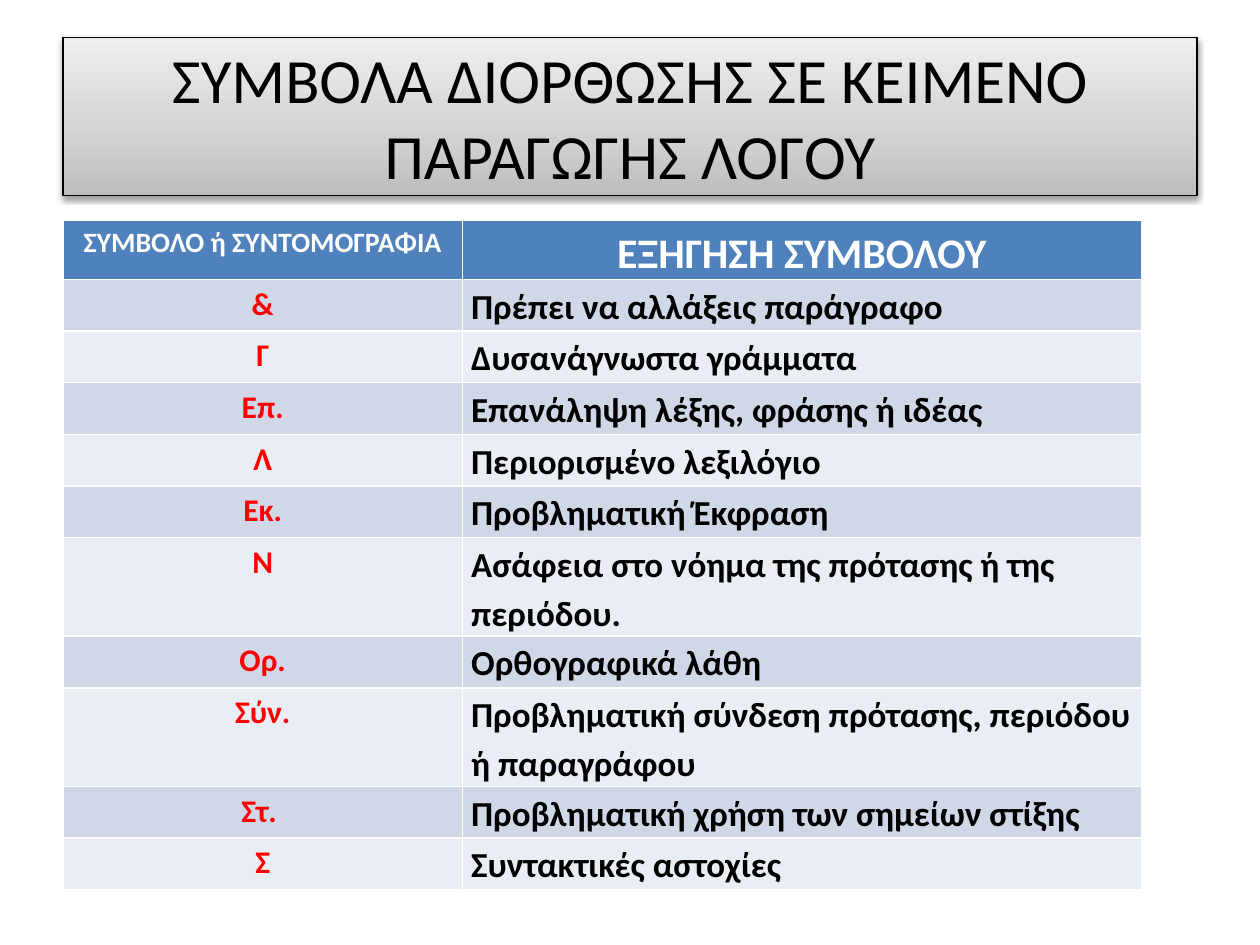
from copy import deepcopy

from pptx import Presentation
from pptx.dml.color import RGBColor
from pptx.enum.text import MSO_ANCHOR, PP_ALIGN
from pptx.oxml import parse_xml
from pptx.oxml.ns import nsdecls, qn
from pptx.util import Inches, Pt

LEFT, CENTER = PP_ALIGN.LEFT, PP_ALIGN.CENTER
MIDDLE = MSO_ANCHOR.MIDDLE
BLACK = RGBColor(0x00, 0x00, 0x00)
WHITE = RGBColor(0xFF, 0xFF, 0xFF)
RED = RGBColor(0xFF, 0x00, 0x00)
HEADER_BLUE = RGBColor(0x4F, 0x81, 0xBD)
BANDS = (RGBColor(0xD0, 0xD8, 0xE8), RGBColor(0xE9, 0xED, 0xF4))
TITLE_GRADIENT = (
    (0, RGBColor(0xBD, 0xBD, 0xBD)),
    (0.35, RGBColor(0xD1, 0xD1, 0xD1)),
    (1, RGBColor(0xEE, 0xEE, 0xEE)),
)
FONT = "Calibri"

HEADING = "ΣΥΜΒΟΛΑ ΔΙΟΡΘΩΣΗΣ ΣΕ ΚΕΙΜΕΝΟ ΠΑΡΑΓΩΓΗΣ ΛΟΓΟΥ"
COLUMN_HEADS = ("ΣΥΜΒΟΛΟ ή ΣΥΝΤΟΜΟΓΡΑΦΙΑ", "ΕΞΗΓΗΣΗ ΣΥΜΒΟΛΟΥ")
SYMBOLS = [
    ("&", "Πρέπει να αλλάξεις παράγραφο"),
    ("Γ", "Δυσανάγνωστα γράμματα"),
    ("Επ.", "Επανάληψη λέξης, φράσης ή ιδέας"),
    ("Λ", "Περιορισμένο λεξιλόγιο"),
    ("Εκ.", "Προβληματική Έκφραση"),
    ("Ν", "Ασάφεια στο νόημα της πρότασης ή της περιόδου."),
    ("Ορ.", "Ορθογραφικά λάθη"),
    ("Σύν.", "Προβληματική σύνδεση πρότασης, περιόδου ή παραγράφου"),
    ("Στ. ", "Προβληματική χρήση των σημείων στίξης"),
    ("Σ", "Συντακτικές αστοχίες"),
]
COLUMN_WIDTHS = (3.17, 5.39)
ROW_HEIGHT = 0.41
HEAD_STYLES = ((16, WHITE, CENTER), (24, WHITE, CENTER))
BODY_STYLES = ((18, RED, CENTER), (20, BLACK, LEFT))
CELL_MARGINS = {
    "margin_left": Inches(0.07),
    "margin_right": Inches(0.07),
    "margin_top": 0,
    "margin_bottom": 0,
}
TITLE_BOX = {
    "left": Inches(0.5),
    "top": Inches(0.3),
    "width": Inches(9),
    "height": Inches(1.25),
}


def set_all(target, values):
    for name, value in values.items():
        setattr(target, name, value)


def write(frame, text, size, color, align, bold, spacing=None):
    paragraph = frame.paragraphs[0]
    set_all(paragraph, {"alignment": align, "line_spacing": spacing})
    run = paragraph.add_run()
    run.text = text
    set_all(run.font, {"name": FONT, "size": Pt(size), "bold": bold})
    run.font.color.rgb = color


def add_heading(slide):
    heading = slide.shapes.title
    set_all(heading, TITLE_BOX)
    heading.text_frame.vertical_anchor = MIDDLE
    write(heading.text_frame, HEADING, 36, BLACK, CENTER, False)
    heading.fill.gradient()
    heading.fill.gradient_angle = 90
    properties = heading._element.spPr
    stop_list = properties.find(qn("a:gradFill")).find(qn("a:gsLst"))
    stop_list.append(deepcopy(stop_list[0]))
    for stop, (position, color) in zip(heading.fill.gradient_stops, TITLE_GRADIENT):
        stop.position = position
        stop.color.rgb = color
    heading.line.color.rgb = BLACK
    heading.line.width = Pt(0.75)
    properties.append(parse_xml(
        f'<a:effectLst {nsdecls("a")}>'
        f'<a:outerShdw blurRad="{Pt(3.1)}" dist="{Pt(1.6)}" dir="5400000" rotWithShape="0">'
        '<a:srgbClr val="000000"><a:alpha val="38000"/></a:srgbClr>'
        '</a:outerShdw></a:effectLst>'
    ))


def add_symbol_table(slide):
    rows = [COLUMN_HEADS, *SYMBOLS]
    table = slide.shapes.add_table(
        len(rows), len(COLUMN_WIDTHS), Inches(0.5), Inches(1.75),
        Inches(sum(COLUMN_WIDTHS)), Inches(ROW_HEIGHT * len(rows)),
    ).table
    for column, width in zip(table.columns, COLUMN_WIDTHS):
        column.width = Inches(width)
    for r, texts in enumerate(rows):
        table.rows[r].height = Inches(ROW_HEIGHT)
        styles = BODY_STYLES if r else HEAD_STYLES
        background = BANDS[(r - 1) % 2] if r else HEADER_BLUE
        for c, (text, style) in enumerate(zip(texts, styles)):
            cell = table.cell(r, c)
            set_all(cell, CELL_MARGINS)
            cell.fill.solid()
            cell.fill.fore_color.rgb = background
            write(cell.text_frame, text, *style, True, 1.15)


def main():
    deck = Presentation()
    set_all(deck, {"slide_width": Inches(10), "slide_height": Inches(7.5)})
    slide = deck.slides.add_slide(deck.slide_layouts.get_by_name("Title Only"))
    add_heading(slide)
    add_symbol_table(slide)
    deck.save("out.pptx")


if __name__ == "__main__":
    main()
